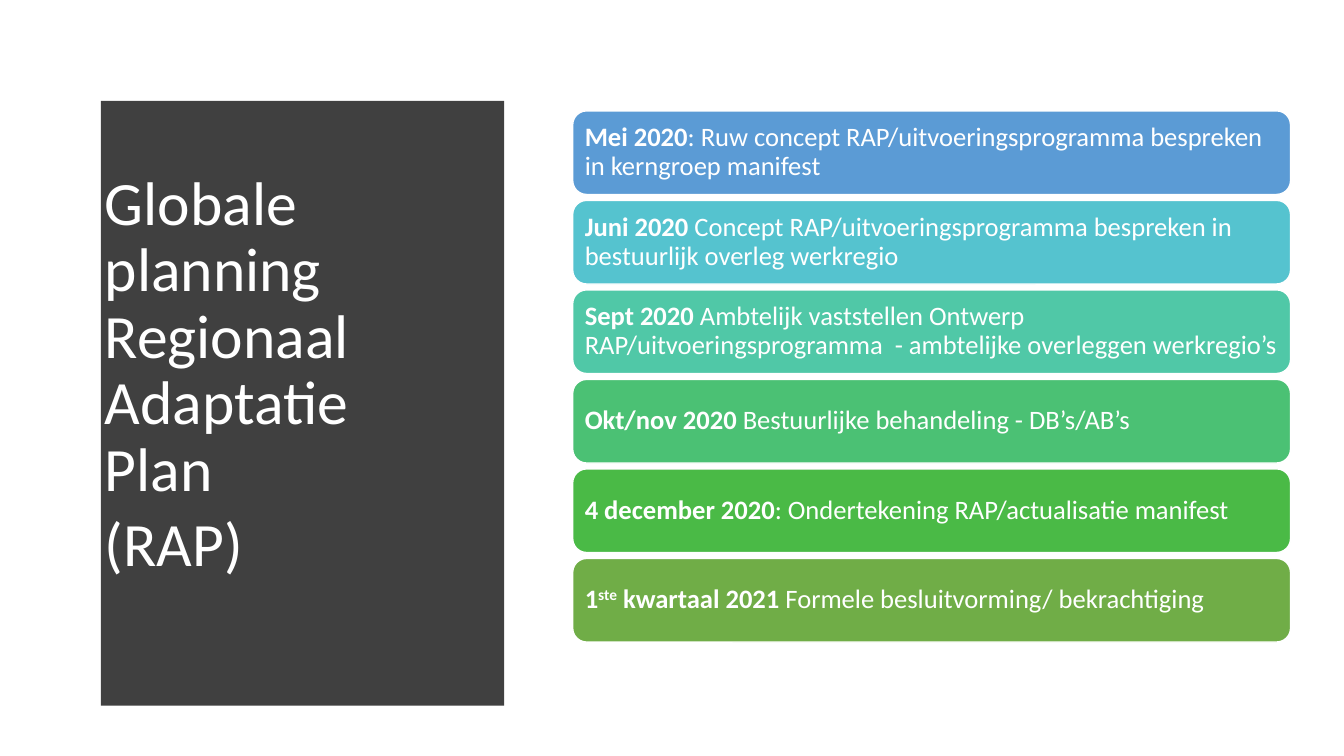
from pptx import Presentation
from pptx.dml.color import RGBColor
from pptx.enum.shapes import MSO_SHAPE as SHAPE
from pptx.enum.text import MSO_ANCHOR as ANCHOR, MSO_AUTO_SIZE as AUTO, PP_ALIGN as ALIGN
from pptx.util import Inches, Pt

FONT = "Calibri"
WHITE = "FFFFFF"
DARK = "404040"

PANEL_LEFT, PANEL_TOP, PANEL_BOTTOM = 0.53, 0.52, 6.96
PANEL_EDGE, PANEL_BULGE, PANEL_STEPS = 5.08, 0.24, 48

STEP_LEFT, STEP_TOP, STEP_WIDTH, STEP_HEIGHT = 5.68, 1.1, 7.12, 0.83
STEP_PITCH = 0.888

TITLE = ["Globale planning Regionaal Adaptatie Plan", "(RAP)"]
STEPS = [
    ("5B9BD5", [("Mei 2020", "b"),
                (": Ruw concept RAP/uitvoeringsprogramma bespreken in kerngroep manifest", "")]),
    ("55C3CF", [("Juni 2020 ", "b"),
                ("Concept RAP/uitvoeringsprogramma bespreken in bestuurlijk overleg werkregio", "")]),
    ("50C8A7", [("Sept 2020 ", "b"),
                ("Ambtelijk vaststellen Ontwerp RAP/uitvoeringsprogramma  - ambtelijke overleggen werkregio’s", "")]),
    ("4BC174", [("Okt/nov 2020 ", "b"),
                ("Bestuurlijke behandeling - DB’s/AB’s", "")]),
    ("4ABA46", [("4 december 2020", "b"),
                (": Ondertekening RAP/actualisatie manifest", "")]),
    ("70AD47", [("1", "b"), ("ste", "b^"), (" kwartaal 2021 ", "b"),
                ("Formele besluitvorming/ bekrachtiging", "")]),
]


def color(value):
    """Turn a hex string into a colour."""
    return RGBColor.from_string(value)


def paint(sp, fill, line=None):
    """Give a shape a flat fill and an optional outline."""
    sp.shadow.inherit = False
    sp.fill.solid()
    sp.fill.fore_color.rgb = color(fill)
    if line:
        sp.line.color.rgb = color(line)
        sp.line.width = Pt(1)
    else:
        sp.line.fill.background()


def style_run(r, size, bold=False):
    """Set the white slide font on a run."""
    r.font.name = FONT
    r.font.size = Pt(size)
    r.font.bold = bold
    r.font.color.rgb = color(WHITE)


def style_frame(tf):
    """Wrap the text, centre it vertically and keep its size."""
    tf.word_wrap = True
    tf.auto_size = AUTO.NONE
    tf.vertical_anchor = ANCHOR.MIDDLE


def add_panel(slide):
    """Draw the dark panel with its right edge bowed as a parabola."""
    middle = (PANEL_TOP + PANEL_BOTTOM) / 2
    half = (PANEL_BOTTOM - PANEL_TOP) / 2
    shares = [2 * i / PANEL_STEPS - 1 for i in range(PANEL_STEPS + 1)]
    edge = [(PANEL_EDGE + PANEL_BULGE * (1 - t * t), middle + half * t) for t in shares]
    builder = slide.shapes.build_freeform(PANEL_LEFT, PANEL_TOP, scale=Inches(1))
    builder.add_line_segments(edge + [(PANEL_LEFT, PANEL_BOTTOM)], close=True)
    panel = builder.convert_to_shape()
    paint(panel, DARK)
    return panel


def format_title(title):
    """Place the title and write its paragraphs."""
    title.left, title.top, title.width, title.height = map(Inches, (0.94, 1.11, 3.74, 5.24))
    tf = title.text_frame
    tf.text = "\n".join(TITLE)
    style_frame(tf)
    for p in tf.paragraphs:
        p.alignment = ALIGN.LEFT
        p.line_spacing = 0.9
        p.space_before = Pt(0)
        p.space_after = Pt(6)
        style_run(p.runs[0], 44)


def add_step(slide, row, fill, parts):
    """Draw one planning step as a rounded bar."""
    top = STEP_TOP + row * STEP_PITCH
    sp = slide.shapes.add_shape(SHAPE.ROUNDED_RECTANGLE, Inches(STEP_LEFT), Inches(top),
                                Inches(STEP_WIDTH), Inches(STEP_HEIGHT))
    paint(sp, fill, WHITE)
    tf = sp.text_frame
    style_frame(tf)
    tf.margin_left = tf.margin_right = tf.margin_top = tf.margin_bottom = Inches(0.08)
    p = tf.paragraphs[0]
    p.alignment = ALIGN.LEFT
    p.line_spacing = 0.9
    for text, marks in parts:
        r = p.add_run()
        r.text = text
        style_run(r, 19, "b" in marks)
        if "^" in marks:
            r.font._element.set("baseline", "30000")


def main():
    """Build and save the slide."""
    prs = Presentation()
    prs.slide_width, prs.slide_height = Inches(13.33), Inches(7.5)
    slide = prs.slides.add_slide(prs.slide_layouts[5])
    title = slide.shapes.title
    panel = add_panel(slide)
    title.element.addprevious(panel.element)
    format_title(title)
    for row, (fill, parts) in enumerate(STEPS):
        add_step(slide, row, fill, parts)
    prs.save("out.pptx")


if __name__ == "__main__":
    main()
